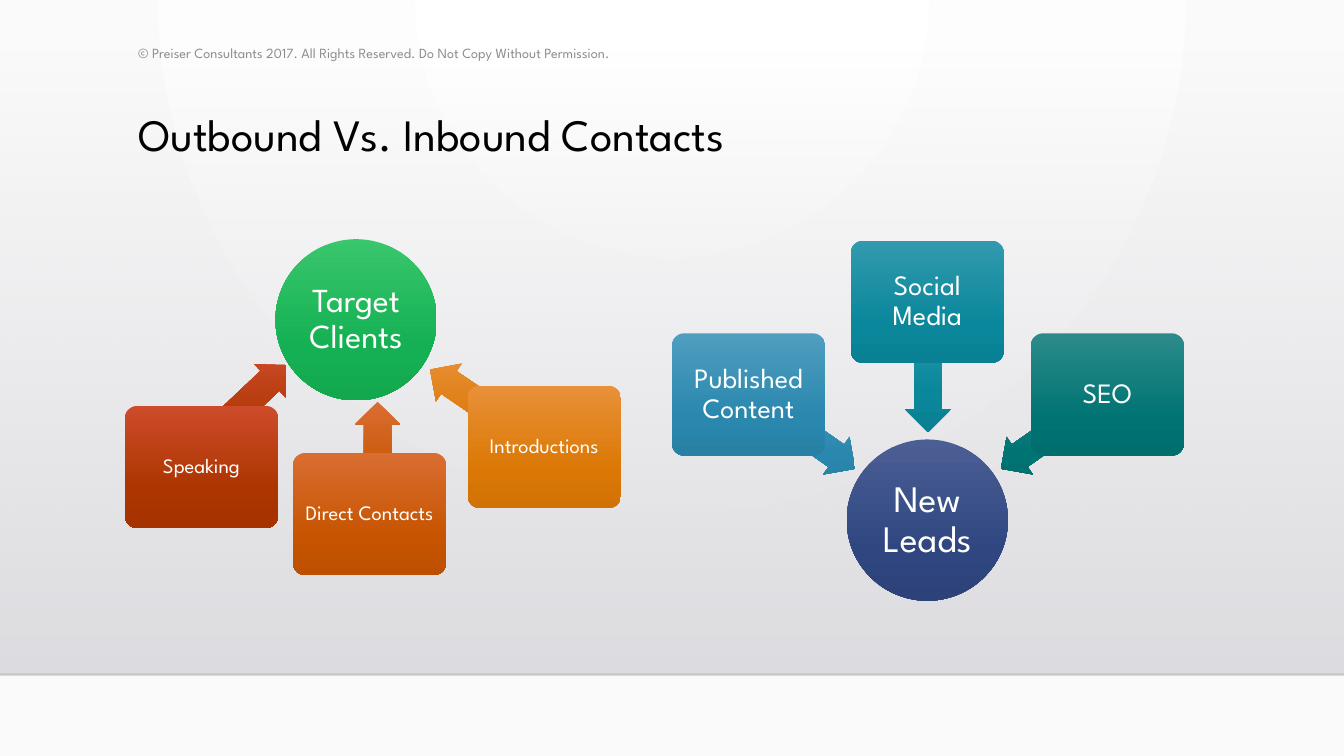
from lxml import etree
from pptx import Presentation
from pptx.dml.color import RGBColor
from pptx.enum.shapes import MSO_CONNECTOR, MSO_SHAPE
from pptx.enum.text import MSO_ANCHOR, PP_ALIGN
from pptx.oxml import parse_xml
from pptx.oxml.ns import nsdecls, qn
from pptx.util import Inches, Pt

ELLIPSE, ROUNDED = MSO_SHAPE.OVAL, MSO_SHAPE.ROUNDED_RECTANGLE
ARROW, RECTANGLE = MSO_SHAPE.LEFT_ARROW, MSO_SHAPE.RECTANGLE
STRAIGHT = MSO_CONNECTOR.STRAIGHT
TOP, MIDDLE = MSO_ANCHOR.TOP, MSO_ANCHOR.MIDDLE
LEFT, CENTER = PP_ALIGN.LEFT, PP_ALIGN.CENTER

FONT = "League Spartan"
BLACK = RGBColor(0x00, 0x00, 0x00)
WHITE = RGBColor(0xFF, 0xFF, 0xFF)
GRAY = RGBColor(0x8C, 0x8C, 0x8C)
RULE = RGBColor(0x00, 0x00, 0x01)

# Content
TITLE = "Outbound Vs. Inbound Contacts"
COPYRIGHT = ("© Preiser Consultants 2017. All Rights Reserved. "
             "Do Not Copy Without Permission.")
PAGE_WIDTH = 10
PAGE_HEIGHT = PAGE_WIDTH * 9 / 16
HUB_SIZE, BOX_WIDTH, BOX_HEIGHT, ARROW_HEIGHT = 1.2, 1.14, 0.91, 0.34

# Each satellite: label, (left, top), colours, arrow (left, top, length, rotation)
DIAGRAMS = [
    {"hub": "Target Clients", "at": (2.05, 1.78), "size": 18, "box_size": 11,
     "inset": 0.02, "colors": ("39C66C", "14B053", "13A74E"),
     "satellites": [
         ("Introductions", (3.48, 2.87), ("E99139", "DB7805", "D07205"),
          (3.11, 2.87, 1.03, 34.3)),
         ("Direct Contacts", (2.18, 3.37), ("DA6E32", "C65400", "BC5000"),
          (2.39, 3.24, 0.84, 90)),
         ("Speaking", (0.93, 3.02), ("CD4B2A", "AC3500", "A43300"),
          (1.32, 2.87, 0.94, 136.5)),
     ]},
    {"hub": "New Leads", "at": (6.3, 3.27), "size": 20, "box_size": 15,
     "inset": 0.03, "colors": ("4C5F95", "2F4680", "2D4279"),
     "satellites": [
         ("Published Content", (5, 2.48), ("4F9EC0", "2A87AE", "2880A5"),
          (5.48, 3.04, 0.97, 215)),
         ("Social Media", (6.33, 1.79), ("329AAE", "0A879B", "0A8094"),
          (6.42, 2.56, 0.97, 270)),
         ("SEO", (7.67, 2.48), ("2C8B8A", "007473", "006E6D"),
          (7.36, 3.04, 0.97, 325)),
     ]},
]

DOWNWARD = '<a:lin ang="5400000" scaled="0"/>'
CIRCULAR = ('<a:path path="circle">'
            '<a:fillToRect l="43000" t="0" r="43000" b="100000"/></a:path>')


def set_gradient(fill, owner, stops, direction=DOWNWARD):
    """Fill with (position %, colour, opacity %) stops."""
    fill.gradient()
    stop_xml = "".join(
        f'<a:gs pos="{position * 1000}"><a:srgbClr val="{color}">'
        f'<a:alpha val="{opacity * 1000}"/></a:srgbClr></a:gs>'
        for position, color, opacity in stops)
    old = next(owner.iter(qn("a:gradFill")))
    old.getparent().replace(old, parse_xml(
        f'<a:gradFill {nsdecls("a")} rotWithShape="0">'
        f'<a:gsLst>{stop_xml}</a:gsLst>{direction}</a:gradFill>'))


def add_shape(page, kind, left, top, width, height, stops):
    shape = page.shapes.add_shape(kind, Inches(left), Inches(top),
                                  Inches(width), Inches(height))
    shape.shadow.inherit = False
    shape.line.fill.background()
    set_gradient(shape.fill, shape.element, stops)
    return shape


def shade(colors):
    return [(position, color, 100) for position, color in zip((0, 69, 100), colors)]


def write(shape, text, size, color, align=LEFT, anchor=MIDDLE, inset=None, spacing=0.9):
    frame = shape.text_frame
    frame.word_wrap = True
    frame.vertical_anchor = anchor
    if inset is not None:
        frame.margin_left = frame.margin_right = Inches(inset)
        frame.margin_top = frame.margin_bottom = Inches(inset)
    para = frame.paragraphs[0]
    para.alignment = align
    para.line_spacing = spacing
    span = para.add_run()
    span.text = text
    span.font.name = FONT
    span.font.size = Pt(size)
    span.font.color.rgb = color


def add_backdrop(page):
    set_gradient(page.background.fill, page.element,
                 [(0, "FFFFFF", 100), (100, "FAFAFA", 100)], CIRCULAR)
    add_shape(page, RECTANGLE, 0, 0.38, PAGE_WIDTH, 4.63,
              [(0, "DCDCE0", 0), (100, "DCDCE0", 100)])
    rule = page.shapes.add_connector(STRAIGHT, Inches(0), Inches(5.02),
                                     Inches(PAGE_WIDTH), Inches(5.02))
    rule.line.width = Pt(1)
    rule.line.color.rgb = RULE
    color = next(rule.element.iter(qn("a:srgbClr")))
    etree.SubElement(color, qn("a:alpha")).set("val", "20000")
    etree.SubElement(rule.element.spPr, qn("a:effectLst"))


def add_diagram(page, diagram):
    hub = add_shape(page, ELLIPSE, *diagram["at"], HUB_SIZE, HUB_SIZE,
                    shade(diagram["colors"]))
    write(hub, diagram["hub"], diagram["size"], WHITE, CENTER, inset=0.01)
    for label, corner, colors, (left, top, length, rotation) in diagram["satellites"]:
        arrow = add_shape(page, ARROW, left, top, length, ARROW_HEIGHT, shade(colors))
        arrow.adjustments[0], arrow.adjustments[1] = 0.6, 0.5
        arrow.rotation = rotation
        box = add_shape(page, ROUNDED, *corner, BOX_WIDTH, BOX_HEIGHT, shade(colors))
        box.adjustments[0] = 0.1
        write(box, label, diagram["box_size"], WHITE, CENTER, inset=diagram["inset"])


def main():
    deck = Presentation()
    deck.slide_width, deck.slide_height = Inches(PAGE_WIDTH), Inches(PAGE_HEIGHT)
    page = deck.slides.add_slide(deck.slide_layouts[5])
    add_backdrop(page)

    # Title, brought in front of the backdrop
    title = page.shapes.title
    title.left, title.top = Inches(0.93), Inches(0.79)
    title.width, title.height = Inches(7.88), Inches(0.87)
    write(title, TITLE, 24, BLACK, anchor=TOP)
    page.shapes.element.append(title.element)

    # Outbound and inbound diagrams
    for diagram in DIAGRAMS:
        add_diagram(page, diagram)

    # Copyright line
    notice = page.shapes.add_textbox(Inches(0.93), Inches(0.27),
                                     Inches(4.87), Inches(0.25))
    write(notice, COPYRIGHT, 7.5, GRAY, spacing=1.0)
    deck.save("out.pptx")


if __name__ == "__main__":
    main()
